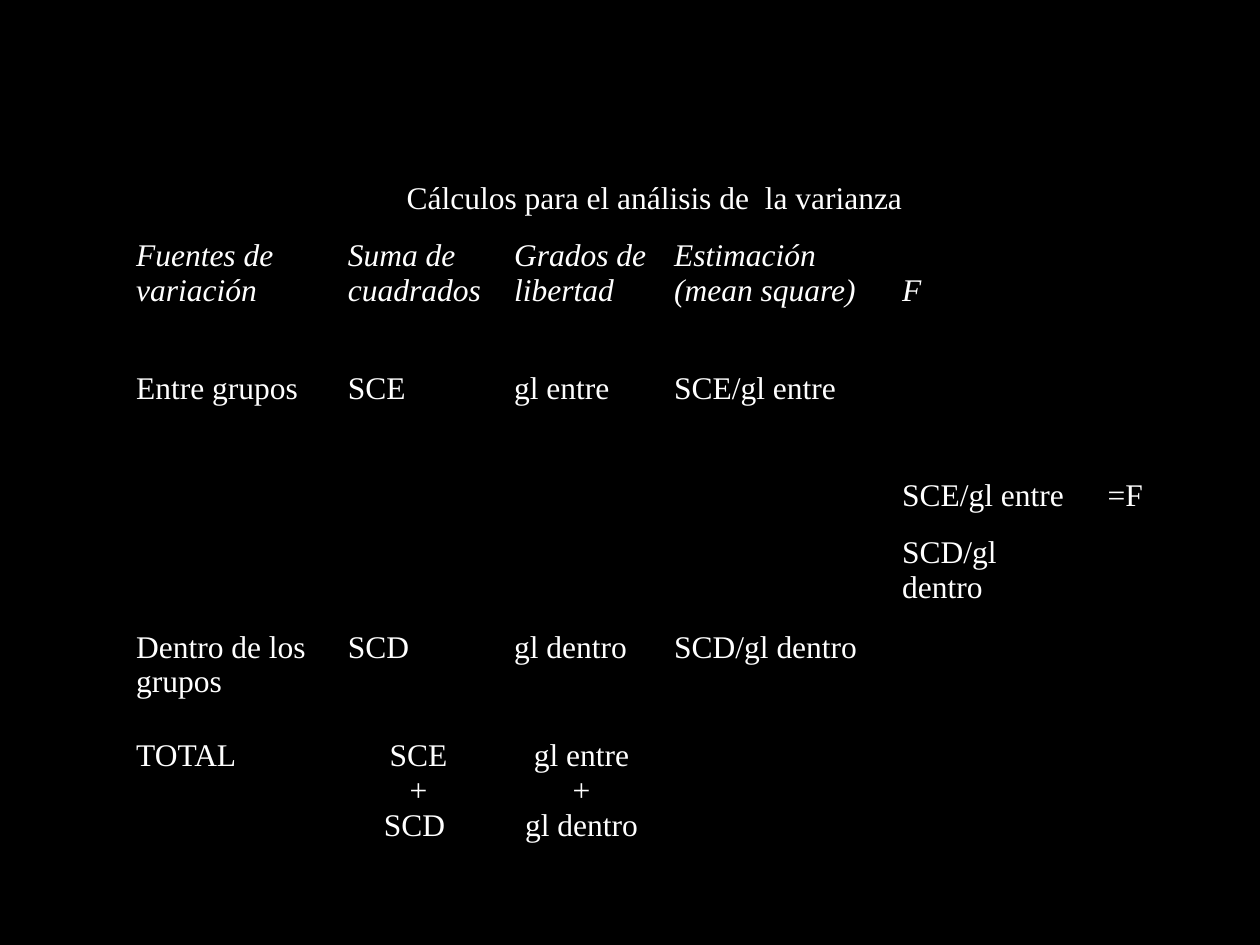
from pptx import Presentation
from pptx.dml.color import RGBColor
from pptx.enum.text import PP_ALIGN as Align
from pptx.oxml import parse_xml
from pptx.oxml.ns import nsdecls
from pptx.util import Pt

BLACK = RGBColor(0, 0, 0)
WHITE = RGBColor(255, 255, 255)
FONT = "Times New Roman"
NO_STYLE = "{2D5ABB26-0587-4C30-8999-92F81FD0307C}"

COLUMN_WIDTHS = [121, 95, 91.5, 130.3, 117.4, 51.8]
ROW_HEIGHTS = [32.4, 76.3, 61.2, 32.4, 54, 61.9, 61.2]
ROWS = [
    ["Cálculos para el análisis de  la varianza"],
    ["Fuentes de variación", "Suma de cuadrados", "Grados de libertad",
     "Estimación (mean square)", "F"],
    ["Entre grupos", "SCE", "gl entre", "SCE/gl entre"],
    ["", "", "", "", "SCE/gl entre", "=F"],
    ["", "", "", "", "SCD/gl dentro"],
    ["Dentro de los grupos", "SCD", "gl dentro", "SCD/gl dentro"],
    ["TOTAL", "SCE\n+\nSCD ", "gl entre\n+\ngl dentro"],
]
TITLE, HEADER, WITHIN, TOTAL = 0, 1, 5, 6
RATIO = (3, 4)  # numerator cell of the F quotient


def add_border(cell, side):
    cell._tc.get_or_add_tcPr().insert(0, parse_xml(
        f'<a:{side} w="12700" {nsdecls("a")}><a:solidFill>'
        f'<a:srgbClr val="{BLACK}"/></a:solidFill></a:{side}>'))


# Page
deck = Presentation()
deck.slide_width, deck.slide_height = Pt(720), Pt(540)
page = deck.slides.add_slide(deck.slide_layouts[6])
page.background.fill.solid()
page.background.fill.fore_color.rgb = BLACK

# Table grid
frame = page.shapes.add_table(
    len(ROW_HEIGHTS), len(COLUMN_WIDTHS), Pt(70.6), Pt(100.1),
    Pt(sum(COLUMN_WIDTHS)), Pt(sum(ROW_HEIGHTS)))
table = frame.table
table.first_row = table.horz_banding = False
table._tbl.tblPr.find("{*}tableStyleId").text = NO_STYLE
for column, width in zip(table.columns, COLUMN_WIDTHS):
    column.width = Pt(width)
for row, height in zip(table.rows, ROW_HEIGHTS):
    row.height = Pt(height)

# Merged cells
table.cell(TITLE, 0).merge(table.cell(TITLE, 5))
for r in (HEADER, 2, WITHIN, TOTAL):
    table.cell(r, 4).merge(table.cell(r, 5))
for c in (0, 1, 2, 3, 5):
    table.cell(3, c).merge(table.cell(4, c))

# Cell fills and rules
for r in range(len(ROW_HEIGHTS)):
    for c in range(len(COLUMN_WIDTHS)):
        cell = table.cell(r, c)
        cell.fill.background()
        if r in (TITLE, HEADER, WITHIN) or (r, c) == RATIO:
            add_border(cell, "lnB")
        if r == TITLE:
            add_border(cell, "lnT")

# Cell text
for r, texts in enumerate(ROWS):
    for c, text in enumerate(texts):
        if not text:
            continue
        cell = table.cell(r, c)
        cell.text_frame.text = text
        for para in cell.text_frame.paragraphs:
            if r == TITLE or (r == TOTAL and c > 0):
                para.alignment = Align.CENTER
            for span in para.runs:
                span.font.name = FONT
                span.font.size = Pt(18)
                span.font.italic = r == HEADER
                span.font.color.rgb = WHITE

# The F heading sits on the second line of the header row
table.cell(HEADER, 4).margin_top = Pt(23.6)

deck.save("out.pptx")
